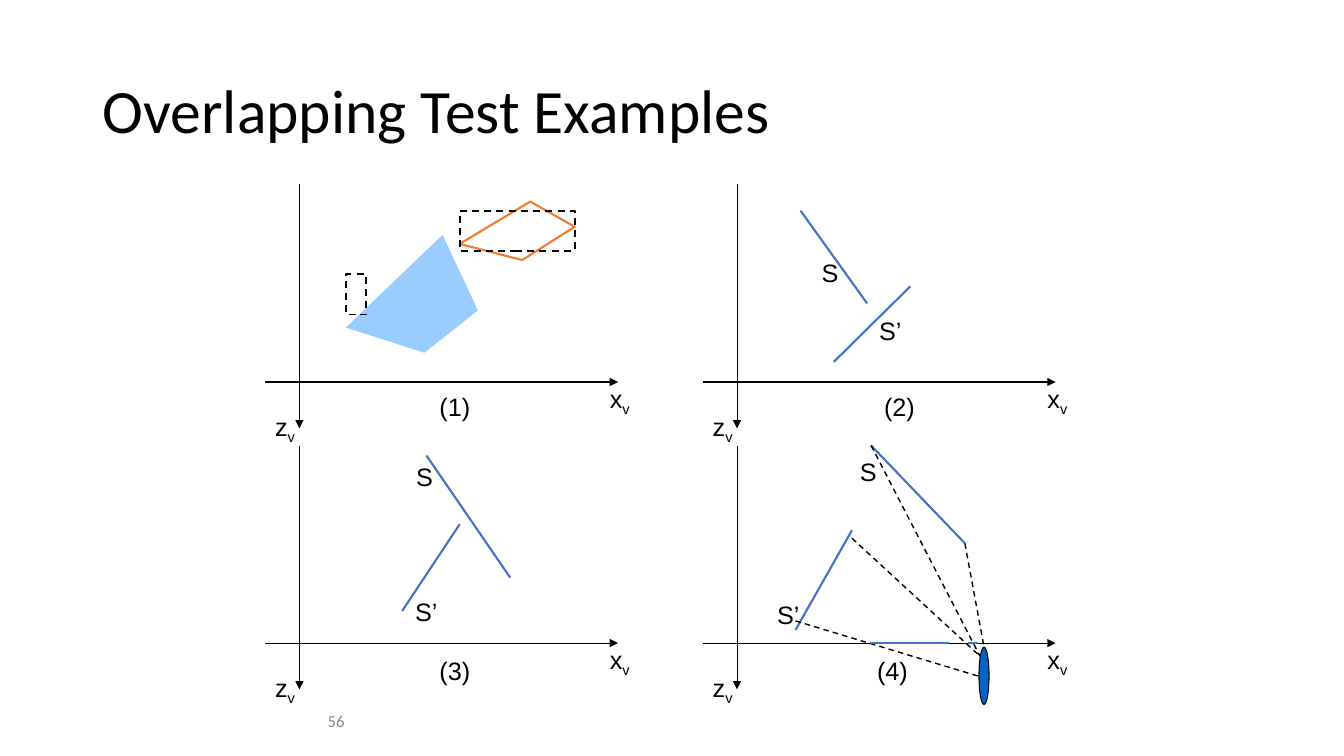
from dataclasses import dataclass

from lxml import etree
from pptx import Presentation
from pptx.dml.color import RGBColor
from pptx.enum.dml import MSO_LINE
from pptx.enum.shapes import MSO_CONNECTOR, MSO_SHAPE
from pptx.enum.text import MSO_ANCHOR, MSO_AUTO_SIZE, PP_ALIGN
from pptx.oxml.ns import qn
from pptx.util import Pt

PX = 9144  # EMU per px, 100 px to the inch
STRAIGHT = MSO_CONNECTOR.STRAIGHT
RECTANGLE, OVAL = MSO_SHAPE.RECTANGLE, MSO_SHAPE.OVAL
DASH = MSO_LINE.DASH
MIDDLE = MSO_ANCHOR.MIDDLE
LEFT, CENTER = PP_ALIGN.LEFT, PP_ALIGN.CENTER
NO_FIT, GROW = MSO_AUTO_SIZE.NONE, MSO_AUTO_SIZE.SHAPE_TO_FIT_TEXT


@dataclass(frozen=True)
class Theme:
    ink: str = "000000"
    muted: str = "898989"
    segment: str = "4472C4"
    outline: str = "ED7D31"
    polygon: str = "99CCFF"
    eye: str = "0563C1"
    title_font: str = "Calibri"
    label_font: str = "Arial"
    title_size: int = 44
    label_size: int = 18
    number_size: int = 12
    thin: float = 0.75
    sight: float = 1
    dashed: float = 1.25
    thick: float = 1.5
    projection: float = 1.75


THEME = Theme()


def px(*lengths):
    return [length * PX for length in lengths]


def set_font(para, name, size, color):
    para.font.name = name
    para.font.size = Pt(size)
    para.font.color.rgb = RGBColor.from_string(color)


def set_line(line, color, width, dash=None):
    line.color.rgb = RGBColor.from_string(color)
    line.width = Pt(width)
    if dash is not None:
        line.dash_style = dash


def set_fill(shape, color):
    if color:
        shape.fill.solid()
        shape.fill.fore_color.rgb = RGBColor.from_string(color)
    else:
        shape.fill.background()


def add_line(parent, start, end, color, width, dash=None, arrow=False):
    connector = parent.shapes.add_connector(STRAIGHT, *px(*start, *end))
    set_line(connector.line, color, width, dash)
    if arrow:
        etree.SubElement(connector.line._get_or_add_ln(), qn("a:tailEnd"), type="triangle")
    etree.SubElement(connector._element.spPr, qn("a:effectLst"))


def add_label(parent, text, left, top, width, subscript=""):
    box = parent.shapes.add_textbox(*px(left, top, width, 40))
    box.text_frame.word_wrap = False
    box.text_frame.auto_size = GROW
    para = box.text_frame.paragraphs[0]
    set_font(para, THEME.label_font, THEME.label_size, THEME.ink)
    para.add_run().text = text
    if subscript:
        span = para.add_run()
        span.text = subscript
        span._r.get_or_add_rPr().set("baseline", "-25000")


def add_box(parent, kind, bounds, width, fill=None, dash=None):
    shape = parent.shapes.add_shape(kind, *px(*bounds))
    shape.shadow.inherit = False
    set_fill(shape, fill)
    set_line(shape.line, THEME.ink, width, dash)


def add_polygon(parent, points, fill=None, outline=None):
    builder = parent.shapes.build_freeform(*points[0], scale=PX)
    builder.add_line_segments(points[1:], close=True)
    shape = builder.convert_to_shape()
    shape.shadow.inherit = False
    set_fill(shape, fill)
    if outline:
        set_line(shape.line, outline, THEME.thick)
    else:
        shape.line.fill.background()


def add_panel(page, left, top):
    """Group holding the two axes and their names."""
    panel = page.shapes.add_group_shape()
    for start, end in (((34, 0), (34, 242)), ((0, 196), (350, 196))):
        add_line(panel, (left + start[0], top + start[1]), (left + end[0], top + end[1]),
                 THEME.ink, THEME.thin, arrow=True)
    add_label(panel, "z", left, top + 220, 41, "v")
    add_label(panel, "x", left + 332, top + 192, 41, "v")
    return panel


def add_segments(panel, segments, s_at, s_prime_at):
    for start, end in segments:
        add_line(panel, start, end, THEME.segment, THEME.thick)
    add_label(panel, "S", *s_at, 37)
    add_label(panel, "S’", *s_prime_at, 43)


def add_title(page, text):
    title = page.shapes.title
    title.left, title.top, title.width, title.height = px(92, 40, 1150, 145)
    frame = title.text_frame
    frame.text = text
    frame.vertical_anchor = MIDDLE
    frame.auto_size = NO_FIT
    para = frame.paragraphs[0]
    para.alignment = LEFT
    para.line_spacing = 0.9
    set_font(para, THEME.title_font, THEME.title_size, THEME.ink)


def add_page_number(page, number):
    box = page.shapes.add_textbox(*px(217, 695, 233, 40))
    box.text_frame.word_wrap = True
    box.text_frame.vertical_anchor = MIDDLE
    para = box.text_frame.paragraphs[0]
    para.text = number
    para.alignment = CENTER
    set_font(para, THEME.title_font, THEME.number_size, THEME.muted)


def main():
    deck = Presentation()
    deck.slide_width, deck.slide_height = px(1333, 750)
    page = deck.slides.add_slide(deck.slide_layouts[5])
    add_title(page, "Overlapping Test Examples")
    add_page_number(page, "56")

    columns, rows = (263, 697), (183, 442)
    extents, behind, in_front, projected = [
        add_panel(page, left, top) for top in rows for left in columns]

    # Panel 1: polygons and their dashed extents
    add_polygon(extents, [(343, 325), (439, 233), (474, 308), (421, 350)], fill=THEME.polygon)
    add_polygon(extents, [(456, 242), (526, 200), (570, 225), (518, 258)], outline=THEME.outline)
    for bounds in ((343, 272, 20, 40), (456, 209, 114, 40)):
        add_box(extents, RECTANGLE, bounds, THEME.dashed, dash=DASH)

    # Panels 2 and 3: surfaces seen edge-on
    add_segments(behind, [((794, 209), (860, 301)), ((827, 359), (903, 284))],
                 (805, 250), (862, 308))
    add_segments(in_front, [((423, 452), (506, 573)), ((399, 606), (456, 520))],
                 (403, 453), (402, 587))

    # Panel 4: sight lines to the eye and projections on the axis
    add_segments(projected, [((864, 442), (957, 539)), ((789, 625), (845, 526))],
                 (843, 448), (761, 590))
    add_box(projected, OVAL, (971, 642, 10, 57), THEME.thin, fill=THEME.eye)
    for start, end in (((957, 539), (976, 642)), ((864, 442), (972, 651)),
                       ((845, 534), (972, 651)), ((789, 616), (971, 671))):
        add_line(projected, start, end, THEME.ink, THEME.sight, DASH)
    for start, end in ((941, 863), (970, 960)):
        add_line(projected, (start, 638), (end, 638), THEME.segment, THEME.projection)

    # Panel numbers
    for number, (left, top) in enumerate(((426, 383), (867, 383), (426, 645), (860, 645)), 1):
        add_label(page, f"({number})", left, top, 51)

    deck.save("out.pptx")


if __name__ == "__main__":
    main()
